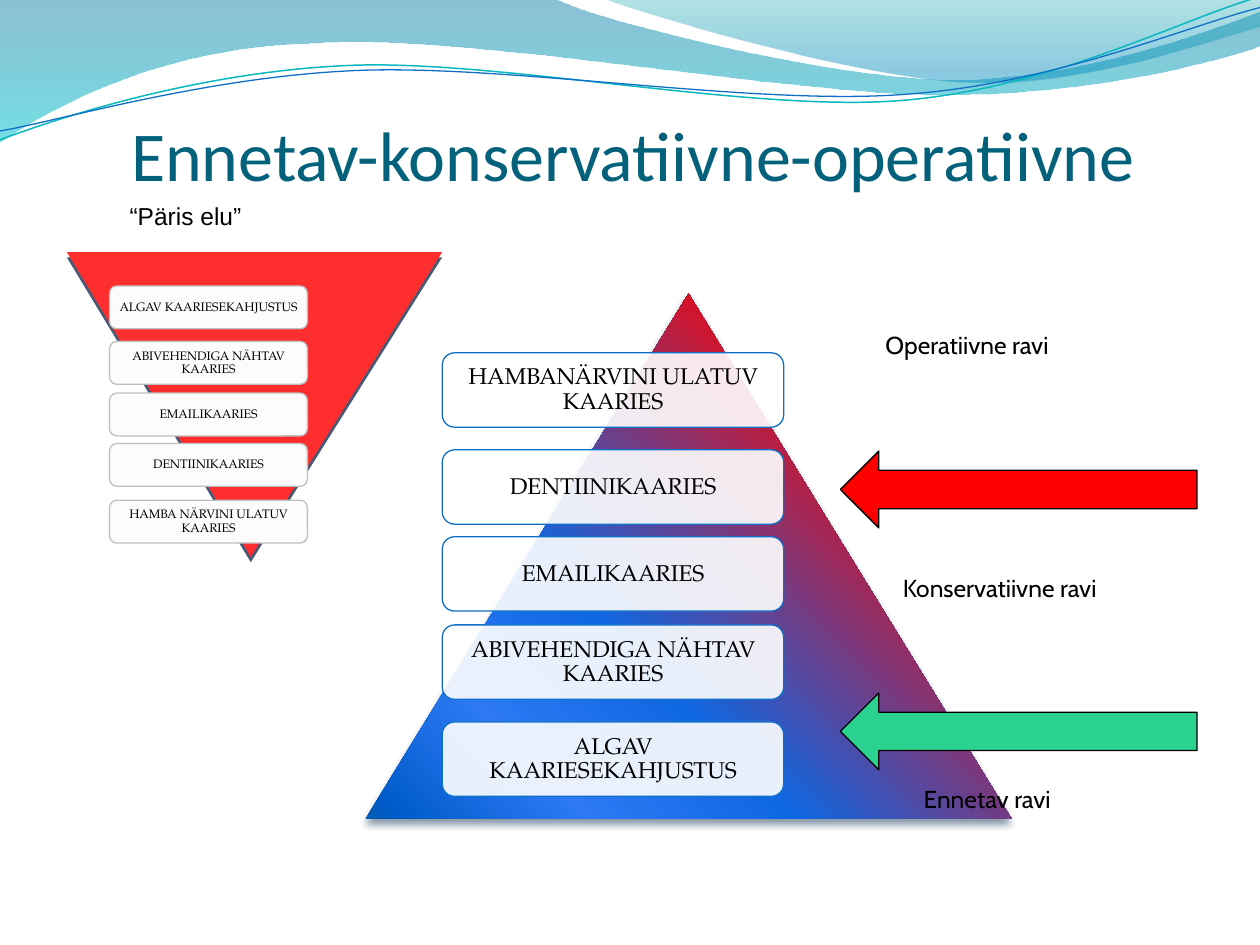
from lxml import etree
from pptx import Presentation
from pptx.dml.color import RGBColor
from pptx.enum.shapes import MSO_SHAPE as SHAPE
from pptx.enum.text import MSO_ANCHOR as ANCHOR, PP_ALIGN as ALIGN
from pptx.oxml import parse_xml
from pptx.oxml.ns import nsdecls, qn
from pptx.util import Inches, Pt

COLORS = {
    "title": "04617B", "text": "000000", "red": "FF0000", "bright_red": "FF2E2E",
    "green": "2BD290", "blue": "0F6FC6", "teal": "0AB8BF", "white": "FFFFFF",
    "off_white": "FCFCFC", "grey": "BFBFBF", "shadow": "042747", "edge": "475A75",
}
LABEL_FONT = "TeX Gyre Pagella"


def rgb(name):
    return RGBColor.from_string(COLORS[name])


def add_outline(page, start, segments, close):
    """Draw segments of one point (a line) or three points (a cubic curve)."""
    spots = [(Inches(x), Inches(y)) for x, y in [start] + sum(segments, [])]
    builder = page.shapes.build_freeform(*spots[0], scale=1.0)
    builder.add_line_segments(spots[1:], close=close)
    shape = builder.convert_to_shape()
    shape.shadow.inherit = False
    # Join the three points of each curve into one cubic segment
    lines = list(shape._element.iter(qn("a:lnTo")))
    for segment in segments:
        group, lines = lines[:len(segment)], lines[len(segment):]
        if len(segment) == 3:
            cubic = etree.Element(qn("a:cubicBezTo"))
            group[0].addprevious(cubic)
            for line in group:
                cubic.append(line[0])
                line.getparent().remove(line)
    return shape


def set_gradient(shape, stops, direction):
    """Fill with stops of (position %, colour, opacity %)."""
    shape.fill.background()
    gradient = parse_xml(f'<a:gradFill {nsdecls("a")} rotWithShape="1"><a:gsLst/>{direction}</a:gradFill>')
    for position, color, opacity in stops:
        stop = etree.SubElement(gradient[0], qn("a:gs"), pos=str(position * 1000))
        value = etree.SubElement(stop, qn("a:srgbClr"), val=color)
        etree.SubElement(value, qn("a:alpha"), val=str(opacity * 1000))
    empty_fill = shape._element.spPr.find(qn("a:noFill"))
    empty_fill.getparent().replace(empty_fill, gradient)
    shape.line.fill.background()


def set_shadow(shape, color, opacity, blur):
    effects = shape._element.spPr.find(qn("a:effectLst"))
    effects.append(parse_xml(
        f'<a:outerShdw {nsdecls("a")} blurRad="{Pt(blur)}" dist="{Pt(3)}" dir="5400000" rotWithShape="0">'
        f'<a:srgbClr val="{COLORS[color]}"><a:alpha val="{opacity * 1000}"/></a:srgbClr></a:outerShdw>'))


def add_preset(page, kind, box, fill=None, line=None):
    shape = page.shapes.add_shape(kind, *map(Inches, box))
    shape.shadow.inherit = False
    if fill:
        shape.fill.solid()
        shape.fill.fore_color.rgb = rgb(fill)
    if line:
        shape.line.color.rgb = rgb(line)
        shape.line.width = Pt(0.75)
    else:
        shape.line.fill.background()
    return shape


def add_text(page, box, text, font, size, color="text", align=ALIGN.CENTER,
             anchor=ANCHOR.TOP, margins=(0.1, 0.05, 0.1, 0.05), wrap=True):
    frame = page.shapes.add_textbox(*map(Inches, box)).text_frame
    frame.word_wrap = wrap
    frame.vertical_anchor = anchor
    (frame.margin_left, frame.margin_top,
     frame.margin_right, frame.margin_bottom) = map(Inches, margins)
    para = frame.paragraphs[0]
    para.text = text
    para.alignment = align
    span = para.runs[0]
    span.font.name, span.font.size = font, Pt(size)
    span.font.color.rgb = rgb(color)
    return para


def add_waves(page):
    vertical = '<a:lin ang="5400000" scaled="0"/>'
    # Broad wave across the whole top
    broad = add_outline(page, (0, 0), [
        [(4.4, -0.01)],
        [(4.76, 0.17), (6.64, 0.63), (7.58, 0.63)],
        [(8.53, 0.63), (9.58, 0.26), (10, 0.09)],
        [(10.01, 0.36)],
        [(9.83, 0.44), (8.7, 0.76), (7.46, 0.75)],
        [(6.22, 0.75), (3.82, 0.28), (2.57, 0.34)],
        [(1.29, 0.36), (0.46, 0.83), (-0.01, 1.13)]], True)
    set_gradient(broad, [(0, "0074A1", 45), (100, "00C6CF", 55)], vertical)
    # Smaller wave at the right
    right = add_outline(page, (4.79, -0.01), [
        [(5.09, 0.11), (6.82, 0.62), (7.69, 0.65)],
        [(8.56, 0.69), (9.61, 0.32), (10, 0.21)],
        [(10, 0)]], True)
    set_gradient(right, [(0, "00A1A9", 30), (80, "008BBF", 45)], vertical)
    # Two thin lines
    teal = [[(0.48, 0.93), (1.58, 0.57), (2.77, 0.52)],
            [(3.95, 0.47), (5.93, 0.89), (7.13, 0.8)],
            [(8.33, 0.71), (9.38, 0.15), (9.98, -0.02)]]
    blue = [[(0.47, 0.96), (1.64, 0.61), (2.83, 0.56)],
            [(4.03, 0.51), (5.97, 0.84), (7.17, 0.75)],
            [(8.36, 0.67), (9.41, 0.21), (10, 0.06)]]
    for top, segments, color, width in ((1.11, teal, "teal", 0.85), (1.04, blue, "blue", 0.75)):
        line = add_outline(page, (0, top), segments, False)
        line.fill.background()
        line.line.color.rgb = rgb(color)
        line.line.width = Pt(width)


def add_title(page, box):
    add_text(page, box, "Ennetav-konservatiivne-operatiivne", "Calibri", 40, "title",
             ALIGN.LEFT, ANCHOR.BOTTOM, (0, 0.05, 0, 0))


def add_stages(page, box, tops, labels, size, inset, margin, fill, line, opacity):
    """Stack rounded labels; box gives left, width and height of each."""
    left, width, height = box
    for top, label in zip(tops, labels):
        stage = add_preset(page, SHAPE.ROUNDED_RECTANGLE, (left, top, width, height), fill, line)
        color = stage._element.spPr.find(qn("a:solidFill"))[0]
        etree.SubElement(color, qn("a:alpha"), val=str(opacity * 1000))
        inner = (left + inset, top + inset, width - 2 * inset, height - 2 * inset)
        para = add_text(page, inner, label, LABEL_FONT, size,
                        anchor=ANCHOR.MIDDLE, margins=[margin] * 4)
        para.line_spacing = 0.9


def add_real_life(page, box):
    triangle = add_preset(page, SHAPE.ISOSCELES_TRIANGLE, box, "bright_red")
    triangle.rotation = 180
    triangle.adjustments[0] = 0.51
    set_shadow(triangle, "edge", 100, 0)
    labels = ["ALGAV KAARIESEKAHJUSTUS", "ABIVEHENDIGA NÄHTAV KAARIES", "EMAILIKAARIES",
              "DENTIINIKAARIES", "HAMBA NÄRVINI ULATUV KAARIES"]
    add_stages(page, (box[0] + 0.34, 1.57, 0.34), [2.27, 2.71, 3.12, 3.52, 3.97],
               labels, 7, 0.02, 0.03, "off_white", "grey", 100)


def add_pyramid(page, box):
    triangle = add_preset(page, SHAPE.ISOSCELES_TRIANGLE, box)
    stops = [(20, "FF0000", 100), (63, "0F67E2", 100), (81, "2C79F3", 100),
             (97, "005BCA", 100), (100, "005BAD", 100)]
    set_gradient(triangle, stops,
                 '<a:path path="circle"><a:fillToRect l="100000" b="100000"/></a:path>')
    set_shadow(triangle, "shadow", 48, 4.5)
    labels = ["HAMBANÄRVINI ULATUV KAARIES", "DENTIINIKAARIES", "EMAILIKAARIES",
              "ABIVEHENDIGA NÄHTAV KAARIES", "ALGAV KAARIESEKAHJUSTUS"]
    add_stages(page, (box[0] + 0.61, 2.71, 0.59), [2.8, 3.57, 4.26, 4.96, 5.73],
               labels, 13, 0.03, 0.05, "white", "blue", 90)


def add_treatments(page, left, width):
    for top, color in ((5.5, "green"), (3.58, "red")):
        add_preset(page, SHAPE.LEFT_ARROW, (left, top, width, 0.61), color, "text")
    captions = [((6.75, 2.33, 1.85, 0.71), "Operatiivne ravi", 0.29),
                ((6.86, 4.5, 2.15, 0.4), "Konservatiivne ravi", 0.05),
                ((7.12, 6.17, 1.43, 0.4), "Ennetav ravi", 0.05)]
    for box, text, top_margin in captions:
        add_text(page, box, text, "Cabin", 14, margins=(0.1, top_margin, 0.1, 0.05), wrap=False)


def main():
    deck = Presentation()
    deck.slide_width, deck.slide_height = Inches(10), Inches(7.5)
    page = deck.slides.add_slide(deck.slide_layouts[6])
    add_waves(page)
    add_real_life(page, (0.53, 2, 2.98, 2.42))
    add_title(page, (1.04, 0.3, 9, 1.25))
    add_pyramid(page, (2.9, 2.33, 5.13, 4.17))
    add_treatments(page, 6.67, 2.83)
    add_text(page, (0.93, 1.55, 1.28, 0.4), "“Päris elu”", "Arial", 14,
             align=ALIGN.LEFT, wrap=False)
    deck.save("out.pptx")


if __name__ == "__main__":
    main()
